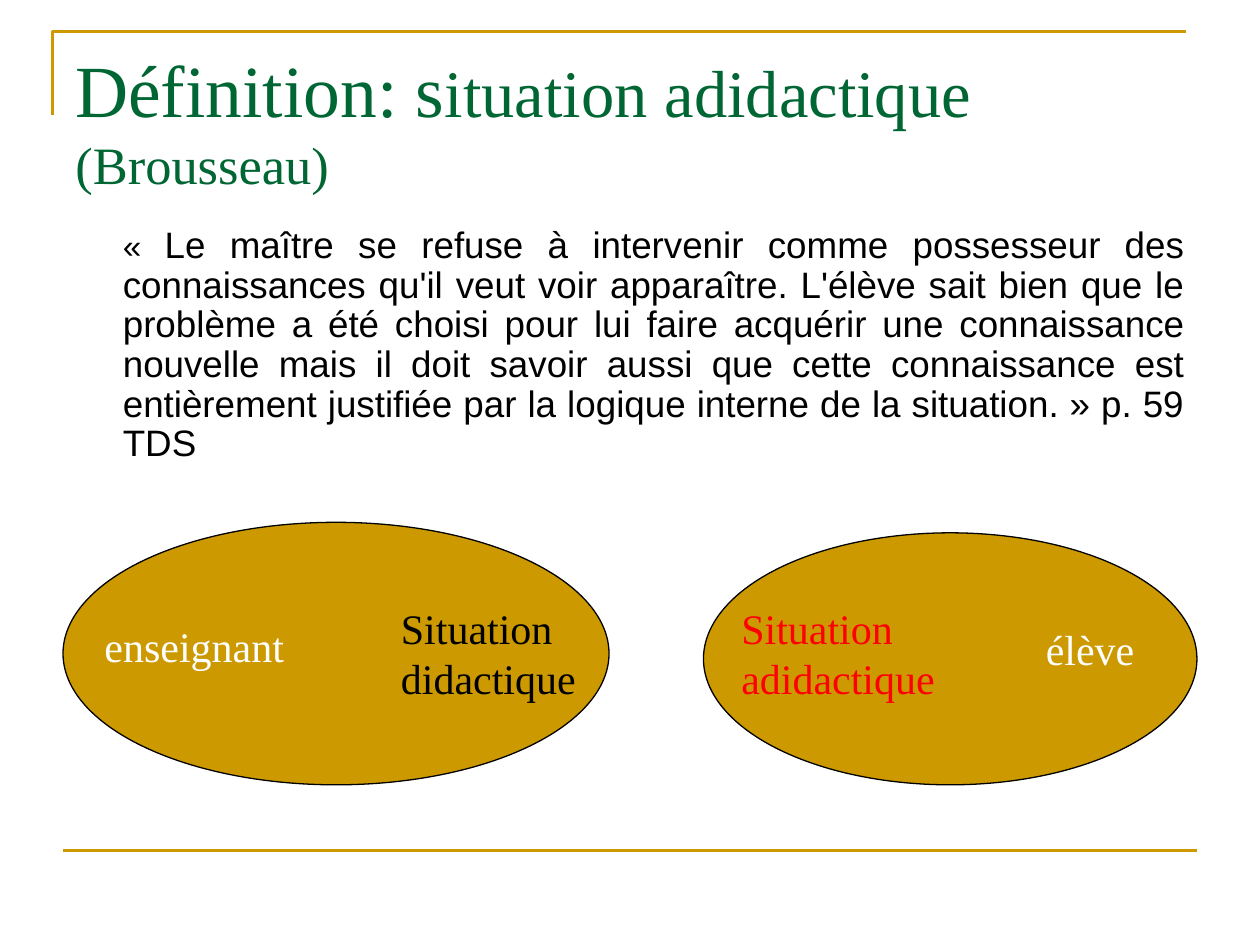
from dataclasses import dataclass

from pptx import Presentation
from pptx.dml.color import RGBColor as RGB
from pptx.enum.shapes import MSO_CONNECTOR as CONNECTOR, MSO_SHAPE as SHAPE
from pptx.enum.text import MSO_ANCHOR as ANCHOR, MSO_AUTO_SIZE as AUTO_SIZE, PP_ALIGN as ALIGN
from pptx.oxml.ns import qn
from pptx.util import Pt
from lxml import etree


@dataclass(frozen=True)
class Theme:
    gold = RGB(0xCC, 0x99, 0x00)
    green = RGB(0x00, 0x66, 0x33)
    black = RGB(0, 0, 0)
    white = RGB(0xFF, 0xFF, 0xFF)
    red = RGB(0xFF, 0, 0)
    serif = "Times New Roman"
    sans = "Arial"
    title_sizes = (42, 38, 30)
    quote_sizes = (19, 21)
    label_size = 24


theme = Theme()


def add_runs(paragraph, texts, sizes, font_name, color):
    for text, size in zip(texts, sizes):
        run = paragraph.add_run()
        run.text = text
        run.font.name = font_name
        run.font.size = Pt(size)
        run.font.color.rgb = color


def add_frame(left, top, width, height, wrap=True):
    box = slide.shapes.add_textbox(Pt(left), Pt(top), Pt(width), Pt(height))
    box.text_frame.word_wrap = wrap
    box.text_frame.vertical_anchor = ANCHOR.TOP
    return box.text_frame


prs = Presentation()
prs.slide_width, prs.slide_height = Pt(720), Pt(540)
slide = prs.slides.add_slide(prs.slide_layouts[6])

# Corner rule above the title
outline = slide.shapes.build_freeform(Pt(30), Pt(66))
outline.add_line_segments([(Pt(30), Pt(18)), (Pt(678), Pt(18))], close=False)
corner = outline.convert_to_shape()
corner.shadow.inherit = False
corner.fill.background()

# Footer rule
footer = slide.shapes.add_connector(CONNECTOR.STRAIGHT, Pt(36), Pt(486), Pt(684), Pt(486))
etree.SubElement(footer._element.spPr, qn("a:effectLst"))
for rule in (corner, footer):
    rule.line.color.rgb = theme.gold
    rule.line.width = Pt(1.5)

# Title
title = add_frame(36, 21.6, 669.6, 90)
add_runs(title.paragraphs[0], ("Définition: s", "ituation adidactique ", "(Brousseau)"),
         theme.title_sizes, theme.serif, theme.green)

# Quotation, with no-break spaces inside the guillemets
quote = add_frame(36, 126, 648, 356.4)
quote.margin_left = Pt(34.2)
quote.paragraphs[0].alignment = ALIGN.JUSTIFY
quote.paragraphs[0].line_spacing = 0.9
add_runs(quote.paragraphs[0], (
    "« ",
    "Le maître se refuse à intervenir comme possesseur des connaissances qu'il veut voir "
    "apparaître. L'élève sait bien que le problème a été choisi pour lui faire acquérir une "
    "connaissance nouvelle mais il doit savoir aussi que cette connaissance est entièrement "
    "justifiée par la logique interne de la situation. » p. 59 TDS",
), theme.quote_sizes, theme.sans, theme.black)

# Ellipses: student side, teacher side
for left, top, width, height in ((402, 304.5, 282, 144), (36, 298.5, 312, 150)):
    side = slide.shapes.add_shape(SHAPE.OVAL, Pt(left), Pt(top), Pt(width), Pt(height))
    side.shadow.inherit = False
    side.fill.solid()
    side.fill.fore_color.rgb = theme.gold
    side.line.color.rgb = theme.black
    side.line.width = Pt(0.75)

# Labels inside the ellipses
labels = [
    (("élève",), 590.5, 353, 65, 36, theme.white),
    (("Situation", "adidactique"), 416.5, 340.5, 126, 65.5, theme.red),
    (("Situation", "didactique"), 222, 340.5, 115, 65.5, theme.black),
    (("enseignant",), 52.6, 351.3, 118, 36, theme.white),
]
for lines, left, top, width, height, color in labels:
    label = add_frame(left, top, width, height, wrap=False)
    label.auto_size = AUTO_SIZE.SHAPE_TO_FIT_TEXT
    for number, line in enumerate(lines):
        paragraph = label.add_paragraph() if number else label.paragraphs[0]
        add_runs(paragraph, (line,), (theme.label_size,), theme.serif, color)

prs.save("out.pptx")
